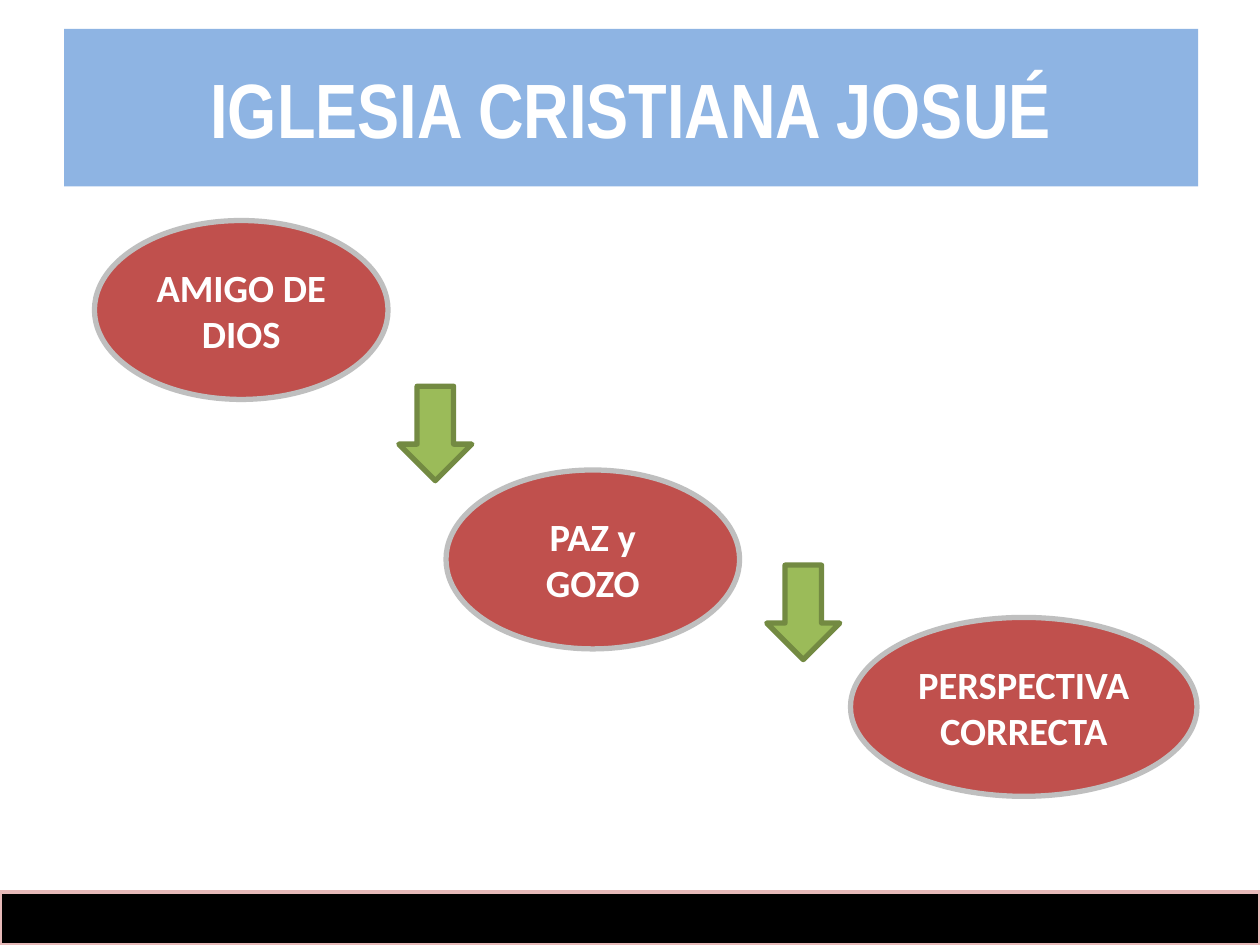
from pptx import Presentation
from pptx.dml.color import RGBColor
from pptx.enum.shapes import MSO_SHAPE
from pptx.enum.text import MSO_ANCHOR, PP_ALIGN
from pptx.util import Inches, Pt

WHITE = RGBColor(0xFF, 0xFF, 0xFF)
BLACK = RGBColor(0x00, 0x00, 0x00)
BLUE = RGBColor(0x8E, 0xB4, 0xE3)
PINK = RGBColor(0xE6, 0xB9, 0xB8)
RED = RGBColor(0xC0, 0x50, 0x4D)
GRAY = RGBColor(0xBF, 0xBF, 0xBF)
GREEN = RGBColor(0x9B, 0xBB, 0x59)
DARK_GREEN = RGBColor(0x73, 0x8A, 0x42)

STEPS = [
    ("AMIGO DE DIOS", 0.75, 1.75, 2.33),
    ("PAZ y GOZO", 3.54, 3.73, 2.33),
    ("PERSPECTIVA CORRECTA", 6.75, 4.9, 2.75),
]
ARROWS = [(3.08, 3.15), (6, 4.57)]


def add_shape(slide, kind, left, top, width, height, fill, line=None, weight=3):
    sp = slide.shapes.add_shape(
        kind, Inches(left), Inches(top), Inches(width), Inches(height)
    )
    sp.shadow.inherit = False
    sp.fill.solid()
    sp.fill.fore_color.rgb = fill
    if line is None:
        sp.line.fill.background()
    else:
        sp.line.color.rgb = line
        sp.line.width = Pt(weight)
    return sp


def set_text(sp, text, size, font="Calibri", color=WHITE, bold=True):
    tf = sp.text_frame
    tf.word_wrap = True
    tf.vertical_anchor = MSO_ANCHOR.MIDDLE
    p = tf.paragraphs[0]
    p.alignment = PP_ALIGN.CENTER
    r = p.add_run()
    r.text = text
    r.font.name = font
    r.font.size = Pt(size)
    r.font.bold = bold
    r.font.color.rgb = color


def add_step(slide, text, left, top, width):
    sp = add_shape(slide, MSO_SHAPE.OVAL, left, top, width, 1.42, RED, GRAY)
    set_text(sp, text, size=22)


def add_arrow(slide, left, top):
    sp = add_shape(
        slide, MSO_SHAPE.RIGHT_ARROW, left, top, 0.75, 0.58, GREEN, DARK_GREEN
    )
    sp.rotation = 90


def add_title(slide, text):
    sp = add_shape(slide, MSO_SHAPE.RECTANGLE, 0.51, 0.23, 9, 1.25, BLUE)
    set_text(sp, text, size=44, font="Arial Narrow")


def main():
    prs = Presentation()
    prs.slide_width = Inches(10)
    prs.slide_height = Inches(7.5)
    slide = prs.slides.add_slide(prs.slide_layouts[6])
    add_shape(slide, MSO_SHAPE.RECTANGLE, 0, 7.08, 10, 0.42, BLACK, PINK, weight=2)
    for step in STEPS:
        add_step(slide, *step)
    for arrow in ARROWS:
        add_arrow(slide, *arrow)
    add_title(slide, "IGLESIA CRISTIANA JOSUÉ")
    prs.save("out.pptx")


if __name__ == "__main__":
    main()
